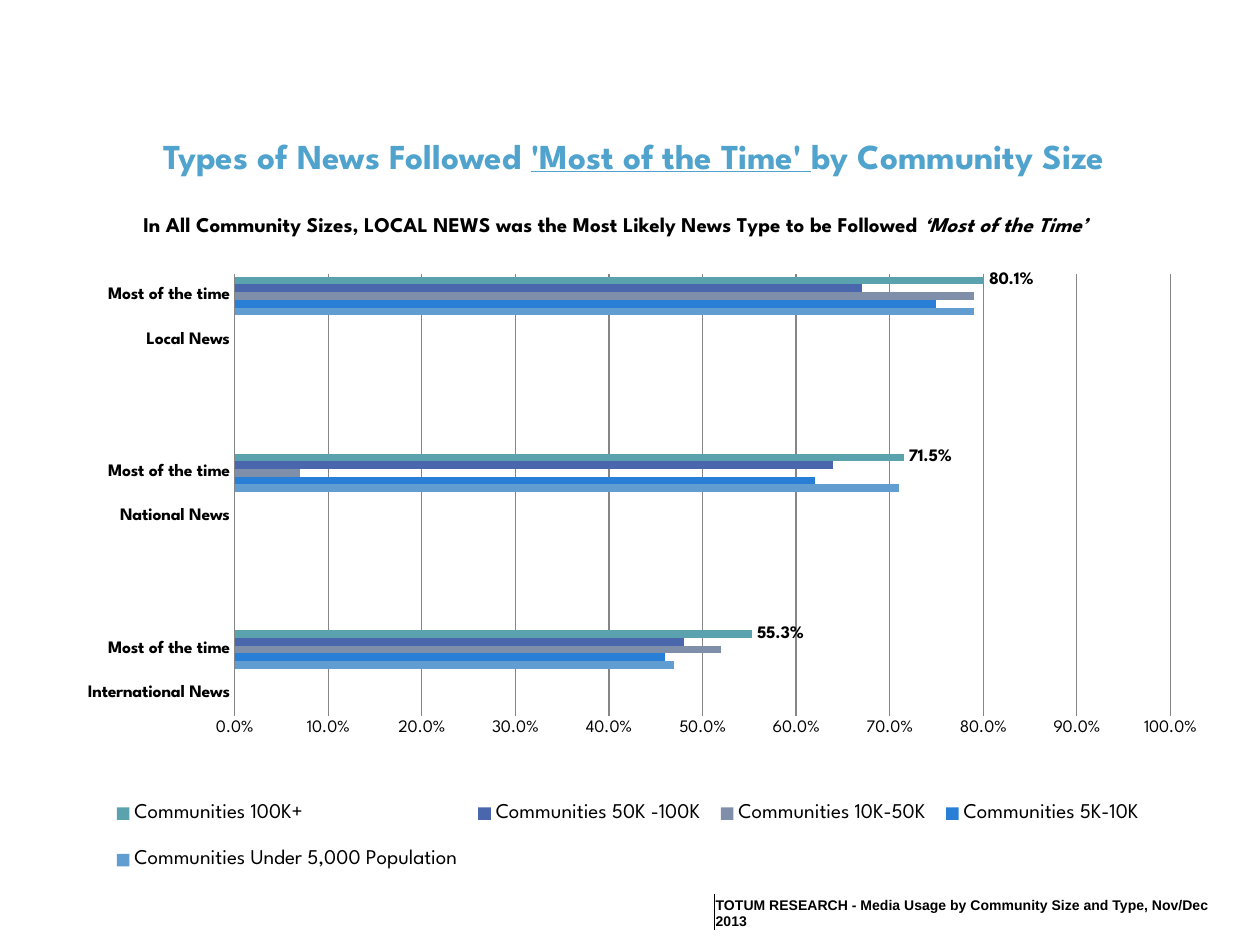
from lxml.etree import SubElement
from pptx import Presentation
from pptx.chart.data import CategoryChartData
from pptx.dml.color import RGBColor
from pptx.enum.chart import XL_CHART_TYPE as ChartType, XL_LABEL_POSITION as LabelPosition
from pptx.enum.chart import XL_LEGEND_POSITION as LegendPosition, XL_TICK_MARK as TickMark
from pptx.enum.text import MSO_ANCHOR as Anchor, PP_ALIGN as Align
from pptx.oxml import parse_xml
from pptx.oxml.ns import nsdecls, qn
from pptx.util import Inches, Pt

FONT = "League Spartan"
PERCENT = r"0.0\%"
NEWS_TYPES = ["International News", "National News", "Local News"]
COMMUNITIES = [
    ("Communities Under 5,000 Population", "629DD1", [47, 71, 79]),
    ("Communities 5K-10K", "297FD5", [46, 62, 75]),
    ("Communities 10K-50K", "7F8FA9", [52, 7, 79]),
    ("Communities 50K -100K", "4A66AC", [48, 64, 67]),
    ("Communities 100K+", "5AA2AE", [55.3, 71.5, 80.1]),
]


def color(value):
    """Turn a hex string into a colour."""
    return RGBColor.from_string(value)


def style_font(font, hex_color="000000", **values):
    """Set the colour and the given values of a font."""
    font.color.rgb = color(hex_color)
    for name, value in values.items():
        setattr(font, name, value)


def add_spans(para, spans, **base):
    """Add runs of (text, extra font values) to a paragraph."""
    for text, extra in spans:
        span = para.add_run()
        span.text = text
        style_font(span.font, **{**base, **extra})


def set_layout(parent, index, **values):
    """Give a chart part a manual layout as fractions of the chart."""
    for old in parent.findall(qn("c:layout")):
        parent.remove(old)
    layout = parse_xml(f"<c:layout {nsdecls('c')}><c:manualLayout/></c:layout>")
    for name, value in values.items():
        SubElement(layout[0], qn(f"c:{name}"), val=str(value))
    parent.insert(index, layout)


def news_data():
    """Space the news types four categories apart, each followed by its bars."""
    data = CategoryChartData(number_format=PERCENT)
    size = 4 * len(NEWS_TYPES) - 2
    labels = [""] * size
    labels[::4] = NEWS_TYPES
    labels[1::4] = ["Most of the time"] * len(NEWS_TYPES)
    data.categories = labels
    for name, _, shares in COMMUNITIES:
        values = [None] * size
        values[1::4] = shares
        data.add_series(name, values)
    return data


def style_axes(chart):
    """Format the category axis and the percentage axis."""
    for axis in (chart.category_axis, chart.value_axis):
        axis.major_tick_mark = axis.minor_tick_mark = TickMark.NONE
    categories, shares = chart.category_axis, chart.value_axis
    style_font(categories.tick_labels.font, name=FONT, size=Pt(10), bold=True)
    categories.format.line.color.rgb = color("868686")
    for name, value in {"minimum_scale": 0, "maximum_scale": 100, "major_unit": 10}.items():
        setattr(shares, name, value)
    shares.tick_labels.number_format = PERCENT
    shares.tick_labels.number_format_is_linked = False
    shares.format.line.fill.background()
    shares.major_gridlines.format.line.color.rgb = color("868686")


def style_bars(chart):
    """Colour the bars and label the last series."""
    plot = chart.plots[0]
    plot.gap_width, plot.overlap, plot.vary_by_categories = 75, 0, False
    for series, (_, fill, _) in zip(plot.series, COMMUNITIES):
        series.format.fill.solid()
        series.format.fill.fore_color.rgb = color(fill)
        series.invert_if_negative = False
    labels = plot.series[len(COMMUNITIES) - 1].data_labels
    values = {"show_value": True, "number_format": PERCENT,
              "number_format_is_linked": False, "position": LabelPosition.OUTSIDE_END}
    for name, value in values.items():
        setattr(labels, name, value)
    style_font(labels.font, name=FONT, size=Pt(10), bold=True)


def add_news_chart(page):
    """Add the bar chart with its title and legend."""
    frame = page.shapes.add_chart(ChartType.BAR_CLUSTERED, Inches(0.15), Inches(0.86),
                                  Inches(9.57), Inches(6.32), news_data())
    chart = frame.chart
    style_font(chart.font, name=FONT, size=Pt(10))
    style_axes(chart)
    style_bars(chart)
    add_spans(chart.chart_title.text_frame.paragraphs[0], [
        ("In All Community Sizes, LOCAL NEWS was the Most Likely News Type to be Followed ", {}),
        ("‘Most of the Time’", {"italic": True}),
    ], name=FONT, size=Pt(12), bold=True)
    chart.has_legend = True
    legend = chart.legend
    legend.position, legend.include_in_layout = LegendPosition.BOTTOM, False
    style_font(legend.font, name=FONT, size=Pt(12))
    edges = {"xMode": "edge", "yMode": "edge"}
    set_layout(chart.chart_title._element, 1, **edges, x=0.1, y=0.13)
    set_layout(legend._element, 1, **edges, x=0.07, y=0.84, w=0.87, h=0.15)
    plot_area = chart._chartSpace.chart.plotArea
    set_layout(plot_area, 0, layoutTarget="inner", **edges, x=0.179, y=0.208, w=0.776, h=0.555)


def add_heading(page):
    """Add the centred slide heading."""
    box = page.shapes.add_textbox(Inches(0.34), Inches(1.02), Inches(9.38), Inches(0.44))
    box.text_frame.word_wrap = True
    para = box.text_frame.paragraphs[0]
    para.alignment = Align.CENTER
    add_spans(para, [
        ("Types of News Followed ", {}),
        ("'Most of the Time' ", {"underline": True}),
        ("by Community Size", {}),
    ], hex_color="50A3CD", name=FONT, size=Pt(20), bold=True)


def add_source_table(page):
    """Add the one-cell table that names the source."""
    table = page.shapes.add_table(1, 1, Inches(5.67), Inches(7.1),
                                  Inches(4.21), Inches(0.18)).table
    table.first_row = table.horz_banding = False
    cell = table.cell(0, 0)
    values = {"vertical_anchor": Anchor.BOTTOM, "margin_left": Inches(0.01),
              "margin_right": Inches(0.01), "margin_top": Inches(0.01), "margin_bottom": 0}
    for name, value in values.items():
        setattr(cell, name, value)
    cell.fill.background()
    cell._tc.get_or_add_tcPr().insert(0, parse_xml(
        f'<a:lnL {nsdecls("a")} w="{Pt(0.5)}"><a:solidFill><a:srgbClr val="000000"/>'
        "</a:solidFill></a:lnL>"))
    source = "TOTUM RESEARCH - Media Usage by Community Size and Type, Nov/Dec 2013"
    add_spans(cell.text_frame.paragraphs[0], [(source, {})], name="Arial", size=Pt(8), bold=True)


def main():
    """Build the deck and save it."""
    deck = Presentation()
    deck.slide_width, deck.slide_height = Inches(10), Inches(7.5)
    page = deck.slides.add_slide(deck.slide_layouts[6])
    add_news_chart(page)
    add_heading(page)
    add_source_table(page)
    deck.save("out.pptx")


if __name__ == "__main__":
    main()
